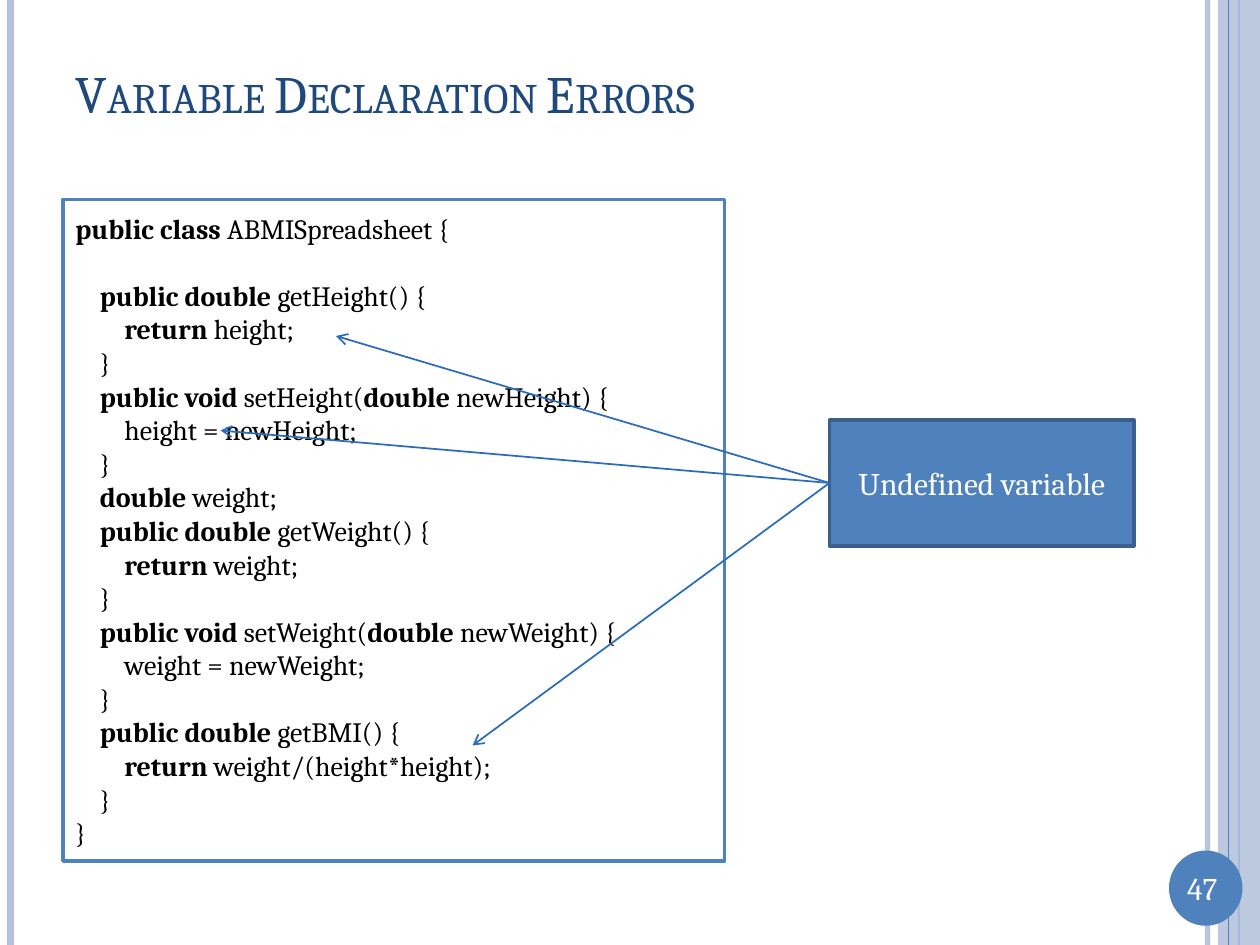
from pptx import Presentation
from pptx.dml.color import RGBColor
from pptx.enum.shapes import MSO_CONNECTOR, MSO_SHAPE
from pptx.enum.text import MSO_ANCHOR, PP_ALIGN
from pptx.oxml.ns import qn
from pptx.util import Pt
from lxml import etree

RECTANGLE, OVAL = MSO_SHAPE.RECTANGLE, MSO_SHAPE.OVAL
STRAIGHT = MSO_CONNECTOR.STRAIGHT
LEFT, CENTER = PP_ALIGN.LEFT, PP_ALIGN.CENTER
TOP, MIDDLE = MSO_ANCHOR.TOP, MSO_ANCHOR.MIDDLE

WHITE = RGBColor(0xFF, 0xFF, 0xFF)
BLACK = RGBColor(0x00, 0x00, 0x00)
NAVY = RGBColor(0x1F, 0x49, 0x7D)
BLUE = RGBColor(0x4F, 0x81, 0xBD)
DARK_BLUE = RGBColor(0x3A, 0x5F, 0x8C)
ARROW_BLUE = RGBColor(0x2C, 0x6C, 0xB9)
PALE_BLUE = RGBColor(0xB3, 0xC1, 0xDB)

FONT = "Cambria"
PAGE_WIDTH, PAGE_HEIGHT = 720, 540
INDENT = 14
CODE_LINE = 19.2

# Each line: indent level, text with keywords between backticks, blank lines above.
CODE = [
    (0, "`public class `ABMISpreadsheet {", 0),
    (1, "`public double `getHeight() {", 1),
    (2, "`return` height;", 0),
    (1, "}", 0),
    (1, "`public void `setHeight(`double `newHeight) {", 0),
    (2, "height = newHeight;", 0),
    (1, "}", 0),
    (1, "`double` weight;", 0),
    (1, "`public double `getWeight() {", 0),
    (2, "`return` weight;", 0),
    (1, "}", 0),
    (1, "`public void `setWeight(`double `newWeight) {", 0),
    (2, "weight = newWeight;", 0),
    (1, "}", 0),
    (1, "`public double `getBMI() {", 0),
    (2, "`return` weight/(height*height);", 0),
    (1, "}", 0),
    (0, "}", 0),
]


def set_opacity(fill_parent, percent):
    color = fill_parent.find(qn("a:solidFill"))[0]
    etree.SubElement(color, qn("a:alpha"), val=str(percent * 1000))


def add_line(page, start, end, color, width, opacity=100, arrow=False):
    line = page.shapes.add_connector(STRAIGHT, *map(Pt, start + end))
    line.line.color.rgb = color
    line.line.width = Pt(width)
    properties = line._element.spPr
    etree.SubElement(properties, qn("a:effectLst"))
    outline = properties.find(qn("a:ln"))
    if opacity < 100:
        set_opacity(outline, opacity)
    if arrow:
        etree.SubElement(outline, qn("a:tailEnd"), type="arrow")


def add_block(page, kind, box, fill, border=None):
    block = page.shapes.add_shape(kind, *map(Pt, box))
    block.shadow.inherit = False
    block.fill.solid()
    block.fill.fore_color.rgb = fill
    if border:
        block.line.color.rgb = border
        block.line.width = Pt(2)
    else:
        block.line.fill.background()
    return block


def add_span(para, text, size, color, bold=False):
    span = para.add_run()
    span.text = text
    for name, value in {"name": FONT, "size": Pt(size), "bold": bold}.items():
        setattr(span.font, name, value)
    span.font.color.rgb = color
    return span


def write_label(shape, text, size, color, align=CENTER, anchor=MIDDLE):
    frame = shape.text_frame
    frame.word_wrap = True
    frame.vertical_anchor = anchor
    para = frame.paragraphs[0]
    para.alignment = align
    return add_span(para, text, size, color)


def add_side_stripes(page, box):
    left, top, width, height = box
    right, bottom = left + width, top + height

    def stripe(x, color, line_width, opacity=100):
        add_line(page, (x, top), (x, bottom), color, line_width, opacity)

    stripe(right - 30, PALE_BLUE, 3, 93)
    stripe(left + 6, PALE_BLUE, 4.5)
    stripe(right - 12, BLUE, 1.5)
    band = add_block(page, RECTANGLE, (right - 24, top, 24, height), PALE_BLUE)
    set_opacity(band._element.spPr, 87)
    stripe(right - 18, BLUE, 0.75)


def add_page_number(page, box, number):
    left, top, width, height = box
    add_block(page, OVAL, box, BLUE)
    label = page.shapes.add_textbox(
        Pt(left - 2), Pt(top + 7), Pt(width), Pt(height - 14))
    write_label(label, number, 18, WHITE, anchor=TOP)


def add_title(page, box, text):
    title = page.shapes.add_textbox(*map(Pt, box))
    span = write_label(title, text, 30, NAVY, align=LEFT)
    span.font._element.set("cap", "small")


def add_code(page, box, lines):
    frame = add_block(page, RECTANGLE, box, WHITE, BLUE).text_frame
    frame.word_wrap = True
    frame.vertical_anchor = MIDDLE
    for index, (level, text, blanks) in enumerate(lines):
        para = frame.add_paragraph() if index else frame.paragraphs[0]
        para.alignment = LEFT
        para.space_before = Pt(blanks * CODE_LINE)
        para._p.get_or_add_pPr().set("marL", str(Pt(level * INDENT)))
        for part, piece in enumerate(text.split("`")):
            if piece:
                add_span(para, piece, 16, BLACK, bold=part % 2 == 1)


def add_callout(page, box, text, targets):
    """Draw a labelled box with arrows from its left edge to the targets."""
    left, top, _, height = box
    write_label(add_block(page, RECTANGLE, box, BLUE, DARK_BLUE), text, 18, WHITE)
    for target in targets:
        add_line(page, (left, top + height / 2), target, ARROW_BLUE, 1, arrow=True)


def main():
    deck = Presentation()
    deck.slide_width, deck.slide_height = Pt(PAGE_WIDTH), Pt(PAGE_HEIGHT)
    page = deck.slides.add_slide(deck.slide_layouts[6])
    add_side_stripes(page, (0, 0, PAGE_WIDTH, PAGE_HEIGHT))
    add_page_number(page, (668, 486, 42, 43), "47")
    add_title(page, (36, 21.6, 624, 62.4), "Variable Declaration Errors")
    add_code(page, (36, 114, 378, 378), CODE)
    add_callout(page, (474, 240, 174, 72), "Undefined variable",
                [(192, 192), (126, 246), (270, 426)])
    deck.save("out.pptx")


if __name__ == "__main__":
    main()
